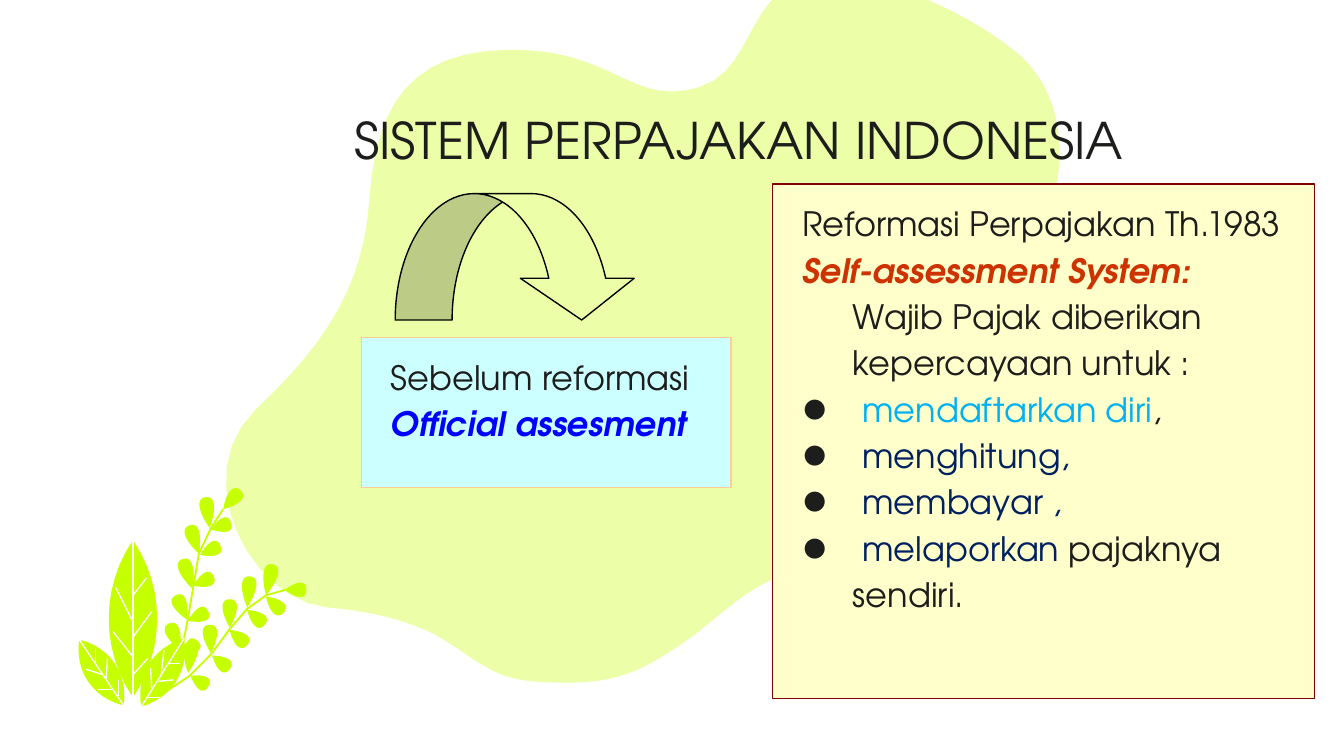
from dataclasses import dataclass, field
from math import hypot
from typing import NamedTuple

from lxml.etree import SubElement
from pptx import Presentation
from pptx.dml.color import RGBColor as Rgb
from pptx.enum.shapes import MSO_SHAPE as Preset
from pptx.enum.text import MSO_ANCHOR as Anchor, PP_ALIGN as Align
from pptx.oxml.ns import qn
from pptx.util import Cm, Pt

COLORS = {
    "pale": "ECFFA8", "lime": "C6FF00", "white": "FFFFFF", "ink": "1D1D1B",
    "aqua": "CCFFFF", "peach": "FFCC99", "cream": "FFFFCC", "maroon": "800000",
    "blue": "0000FF", "red": "CC3300", "sky": "00B0F0", "navy": "002060",
    "black": "000000",
}
FONT = "TeX Gyre Adventor"
GRID = 2.54
STEPS = 12
Point = tuple[float, float]


class Run(NamedTuple):
    text: str
    color: str = "ink"
    strong: bool = False


@dataclass
class Line:
    runs: list[Run]
    margin: float = 1.27
    indent: float = -0.96
    bullet: bool = False
    size: int = 18
    spacing: float = 1.15
    align: Align = Align.LEFT


@dataclass
class Panel:
    box: tuple[float, float, float, float]
    lines: list[Line]
    fill: str | None = None
    border: str | None = None
    anchor: Anchor = Anchor.TOP


@dataclass
class Blade:
    tip: Point
    base: Point
    bulge: float
    veins: list[tuple[Point, Point]]


@dataclass
class Sprig:
    stem: list[Point]
    leaves: list[tuple[Point, Point]] = field(default_factory=list)


def rgb(name: str) -> Rgb:
    return Rgb.from_string(COLORS[name])


def paint(shape, fill: str | None, border: str | None = None, width: float = 0.75) -> None:
    shape.shadow.inherit = False
    for target, color in ((shape.fill, fill), (shape.line.fill, border)):
        if color:
            target.solid()
            target.fore_color.rgb = rgb(color)
        else:
            target.background()
    if border:
        shape.line.width = Pt(width)


def write_line(paragraph, line: Line) -> None:
    paragraph.alignment = line.align
    paragraph.line_spacing = line.spacing
    props = paragraph._p.get_or_add_pPr()
    props.set("marL", str(Cm(line.margin)))
    props.set("indent", str(Cm(line.indent)))
    if line.bullet:
        SubElement(SubElement(props, qn("a:buClr")), qn("a:srgbClr"), val=COLORS["ink"])
        SubElement(props, qn("a:buFont"), typeface=FONT)
        SubElement(props, qn("a:buChar"), char="●")
    for part in line.runs:
        run = paragraph.add_run()
        run.text = part.text
        formats = {"name": FONT, "size": Pt(line.size), "bold": part.strong, "italic": part.strong}
        for key, value in formats.items():
            setattr(run.font, key, value)
        run.font.color.rgb = rgb(part.color)


def draw_panel(shapes, panel: Panel) -> None:
    box = [Cm(v) for v in panel.box]
    if panel.fill:
        shape = shapes.add_shape(Preset.RECTANGLE, *box)
        paint(shape, panel.fill, panel.border)
    else:
        shape = shapes.add_textbox(*box)
    frame = shape.text_frame
    margins = {f"margin_{side}": Cm(0.25) for side in ("left", "top", "right", "bottom")}
    for key, value in {"word_wrap": True, "vertical_anchor": panel.anchor, **margins}.items():
        setattr(frame, key, value)
    for number, line in enumerate(panel.lines):
        write_line(frame.add_paragraph() if number else frame.paragraphs[0], line)


def curve(start: Point, near: Point, far: Point, end: Point) -> list[Point]:
    points = []
    for step in range(STEPS + 1):
        t = step / STEPS
        weights = ((1 - t) ** 3, 3 * t * (1 - t) ** 2, 3 * t * t * (1 - t), t ** 3)
        points.append(tuple(sum(w * p[axis] for w, p in zip(weights, (start, near, far, end)))
                            for axis in (0, 1)))
    return points


def leaf(base: Point, tip: Point, near: Point, far: Point) -> list[Point]:
    dx, dy = tip[0] - base[0], tip[1] - base[1]
    length = hypot(dx, dy)

    def place(along: float, aside: float) -> Point:
        return (base[0] + along * dx - aside * dy / length,
                base[1] + along * dy + aside * dx / length)

    left, right = (curve(base, place(near[0], side * near[1]), place(far[0], side * far[1]), tip)
                   for side in (1, -1))
    return left + right[::-1]


def outline(shapes, contours: list[list[Point]], closed: bool = True):
    scaled = [[(Cm(x * GRID), Cm(y * GRID)) for x, y in contour] for contour in contours]
    builder = shapes.build_freeform(*scaled[0][0])
    for number, contour in enumerate(scaled):
        if number:
            builder.move_to(*contour[0])
        builder.add_line_segments(contour[1:], close=closed)
    return builder.convert_to_shape()


def draw_blob(shapes) -> None:
    points = [BLOB_START]
    for x1, y1, x2, y2, x3, y3 in BLOB_CURVES:
        points += curve(points[-1], (x1, y1), (x2, y2), (x3, y3))[1:]
    paint(outline(shapes, [points]), "pale")


def draw_sprig(shapes, sprig: Sprig) -> None:
    paint(outline(shapes, [sprig.stem], closed=False), None, "lime", 1)
    leaves = [leaf(base, tip, (0.4, 0.05), (1, 0.09)) for base, tip in sprig.leaves]
    paint(outline(shapes, leaves), "lime")


def draw_blade(shapes, blade: Blade) -> None:
    paint(outline(shapes, [leaf(blade.base, blade.tip, (0.3, blade.bulge), (0.7, blade.bulge))]), "lime")
    ribs = [list(vein) for vein in [(blade.tip, blade.base), *blade.veins]]
    paint(outline(shapes, ribs, closed=False), None, "white")


BLOB_START = (6.19, -0.17)
BLOB_CURVES = [
    (5.51, -0.17, 5.67, 0.5, 5.2, 0.65), (5.12, 0.67, 5.06, 0.68, 4.99, 0.68),
    (4.65, 0.68, 4.46, 0.37, 3.81, 0.37), (3.04, 0.37, 2.8, 0.8, 2.75, 1.46),
    (2.71, 2.12, 2.43, 2.55, 1.91, 3.04), (1.38, 3.54, 1.86, 4.46, 2.43, 4.52),
    (2.66, 4.54, 2.9, 4.58, 3.12, 4.67), (3.34, 4.75, 3.51, 4.93, 3.73, 5.02),
    (3.89, 5.08, 4.07, 5.08, 4.25, 5.08), (4.64, 5.08, 4.85, 4.95, 5.16, 4.73),
    (5.38, 4.56, 5.66, 4.28, 5.95, 4.26), (6.35, 4.22, 6.72, 4.81, 7.36, 4.93),
    (8.05, 5.02, 8.62, 3.48, 8.44, 2.88), (8.25, 2.25, 7.73, 2.03, 7.84, 1.51),
    (7.95, 0.99, 7.84, 0.66, 7.61, 0.43), (7.61, 0.43, 7.01, -0.12, 6.19, -0.17),
]
SPRIGS = [
    Sprig([(1.3, 5.08), (1.36, 4.8), (1.4, 4.6), (1.44, 4.36), (1.48, 4.12), (1.57, 3.93), (1.66, 3.79)],
          [((1.66, 3.79), (1.79, 3.65)),
           ((1.57, 3.94), (1.72, 3.89)), ((1.56, 3.93), (1.53, 3.7)),
           ((1.49, 4.13), (1.64, 4.06)), ((1.48, 4.12), (1.41, 3.91)),
           ((1.44, 4.36), (1.59, 4.29)), ((1.43, 4.38), (1.36, 4.16)),
           ((1.4, 4.62), (1.55, 4.55)), ((1.39, 4.61), (1.31, 4.43)),
           ((1.37, 4.88), (1.47, 4.77)), ((1.34, 4.84), (1.26, 4.64))]),
    Sprig([(1.2, 5.17), (1.41, 5.03), (1.57, 4.87), (1.71, 4.68), (1.84, 4.53), (1.98, 4.43), (2.12, 4.39)],
          [((2.12, 4.39), (2.28, 4.39)),
           ((1.98, 4.43), (2.03, 4.2)), ((1.98, 4.44), (2.11, 4.56)),
           ((1.84, 4.52), (1.86, 4.29)), ((1.84, 4.54), (1.97, 4.65)),
           ((1.71, 4.67), (1.71, 4.46)), ((1.71, 4.69), (1.84, 4.8)),
           ((1.57, 4.86), (1.56, 4.65)), ((1.58, 4.88), (1.71, 4.98)),
           ((1.4, 5.01), (1.43, 4.77)), ((1.42, 5.03), (1.55, 5.11))]),
]
BLADES = [
    Blade((0.99, 4.02), (0.99, 5.19), 0.24,
          [((0.99, 4.43), (1.09, 4.3)), ((0.99, 4.74), (1.13, 4.55)), ((0.99, 5.02), (1.1, 4.9)),
           ((0.99, 4.89), (0.84, 4.7)), ((0.99, 4.63), (0.86, 4.37))]),
    Blade((1.37, 4.75), (1.05, 5.26), 0.16,
          [((1.26, 4.94), (1.34, 4.94)), ((1.18, 5.07), (1.29, 5.06)), ((1.1, 5.19), (1.19, 5.19)),
           ((1.13, 5.13), (1.12, 4.97)), ((1.2, 5.02), (1.22, 4.84))]),
    Blade((0.59, 4.76), (0.92, 5.25), 0.16,
          [((0.71, 4.93), (0.71, 4.82)), ((0.79, 5.05), (0.8, 4.9)), ((0.88, 5.18), (0.88, 5.06)),
           ((0.84, 5.13), (0.72, 5.13)), ((0.76, 5.02), (0.64, 4.98))]),
]
PANELS = [
    Panel((2.57, 1.47, 20.24, 2.34), [
        Line([Run("SISTEM PERPAJAKAN INDONESIA")], GRID, 0, size=27, spacing=1, align=Align.CENTER),
    ], anchor=Anchor.MIDDLE),
    Panel((6.83, 6.38, 6.99, 2.84), [
        Line([Run("Sebelum reformasi")]),
        Line([Run("Official assesment", "blue", True)]),
    ], "aqua", "peach"),
    Panel((14.6, 3.48, 10.24, 9.73), [
        Line([Run("Reformasi Perpajakan Th.1983")]),
        Line([Run("Self-assessment System:", "red", True)]),
        Line([Run("Wajib Pajak diberikan kepercayaan untuk :")], indent=0),
        Line([Run(" mendaftarkan diri", "sky"), Run(",")], bullet=True),
        Line([Run(" menghitung,", "navy")], bullet=True),
        Line([Run(" membayar ,", "navy")], bullet=True),
        Line([Run(" melaporkan ", "navy"), Run("pajaknya sendiri.")], bullet=True),
    ], "cream", "maroon"),
]


def main() -> None:
    deck = Presentation()
    deck.slide_width, deck.slide_height = Cm(25.4), Cm(14.29)
    shapes = deck.slides.add_slide(deck.slide_layouts[6]).shapes
    draw_blob(shapes)
    for panel in PANELS:
        draw_panel(shapes, panel)
    arrow = shapes.add_shape(Preset.CURVED_DOWN_ARROW, Cm(7.47), Cm(3.66), Cm(4.6), Cm(2.39))
    for number, ratio in enumerate((0.45, 0.9, 0.333)):
        arrow.adjustments[number] = round(ratio, 2)
    paint(arrow, "pale", "black")
    for sprig in SPRIGS:
        draw_sprig(shapes, sprig)
    for blade in BLADES:
        draw_blade(shapes, blade)
    deck.save("out.pptx")


if __name__ == "__main__":
    main()
